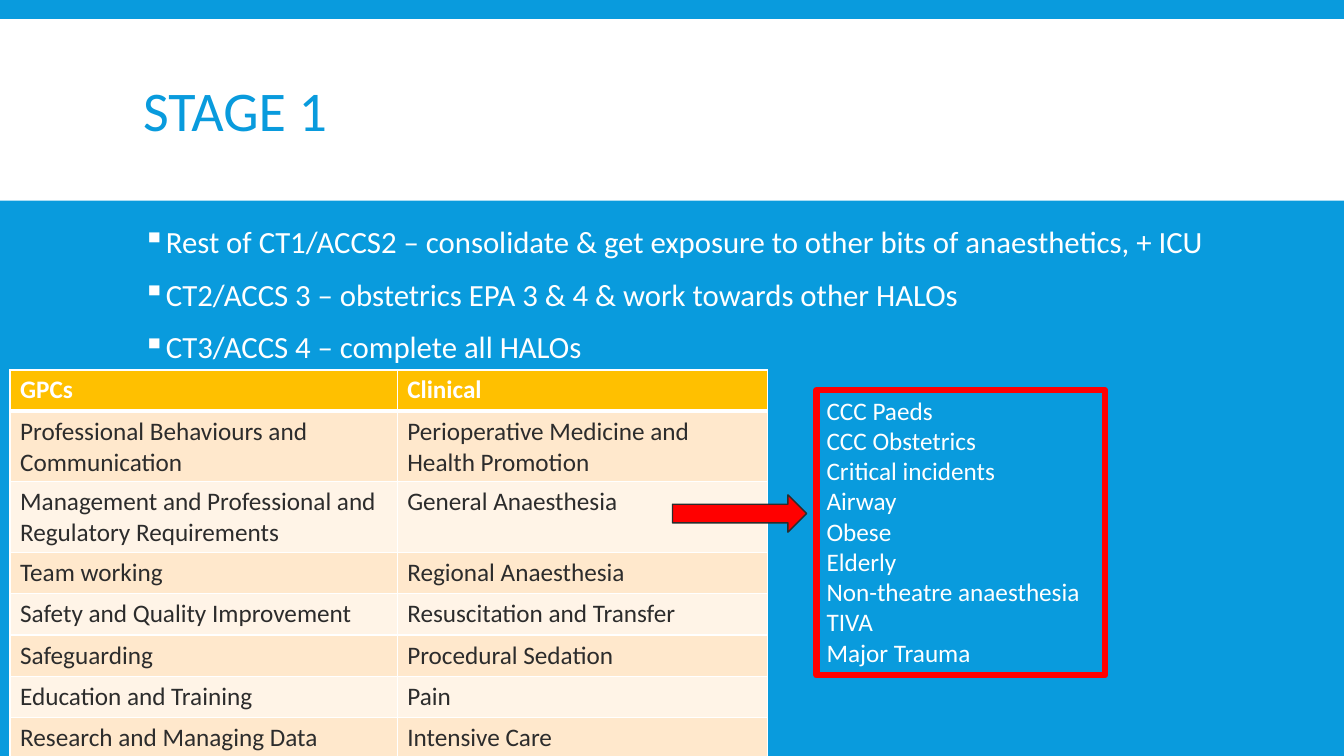
"""Builds the Stage 1 training slide with its curriculum table and callout."""
from lxml import etree
from pptx import Presentation
from pptx.dml.color import RGBColor
from pptx.enum.shapes import MSO_SHAPE
from pptx.enum.text import MSO_ANCHOR, MSO_AUTO_SIZE, PP_ALIGN
from pptx.oxml.ns import qn
from pptx.util import Inches, Pt

RECTANGLE, RIGHT_ARROW = MSO_SHAPE.RECTANGLE, MSO_SHAPE.RIGHT_ARROW
LEFT, TOP, MIDDLE = PP_ALIGN.LEFT, MSO_ANCHOR.TOP, MSO_ANCHOR.MIDDLE
FIT_SHAPE, NO_FIT = MSO_AUTO_SIZE.SHAPE_TO_FIT_TEXT, MSO_AUTO_SIZE.NONE

THEME = {
    "font": "Calibri",
    "blue": "099BDD", "white": "FFFFFF", "ink": "2C2C2C", "red": "FF0000",
    "header": "FFC000", "bands": ("FFE8CC", "FFF4E7"),
    "title": Pt(40), "bullet": Pt(22), "body": Pt(18),
}

BULLETS = (
    "Rest of CT1/ACCS2 – consolidate & get exposure to other bits of anaesthetics, + ICU",
    "CT2/ACCS 3 – obstetrics EPA 3 & 4 & work towards other HALOs",
    "CT3/ACCS 4 – complete all HALOs",
)
DOMAINS = (
    ("GPCs", "Clinical"),
    ("Professional Behaviours and Communication",
     "Perioperative Medicine and Health Promotion"),
    ("Management and Professional and Regulatory Requirements", "General Anaesthesia"),
    ("Team working", "Regional Anaesthesia"),
    ("Safety and Quality Improvement", "Resuscitation and Transfer"),
    ("Safeguarding", "Procedural Sedation"),
    ("Education and Training", "Pain"),
    ("Research and Managing Data", "Intensive Care"),
)
ANAESTHESIA_TOPICS = (
    "CCC Paeds", "CCC Obstetrics", "Critical incidents", "Airway", "Obese",
    "Elderly", "Non-theatre anaesthesia", "TIVA", "Major Trauma",
)


def apply_format(target, **values):
    """Set each given value as an attribute of the target."""
    for attribute, value in values.items():
        setattr(target, attribute, value)


def write_paragraph(paragraph, text, size, color, bold=False):
    """Put left-aligned text in a paragraph as one formatted run."""
    paragraph.alignment = LEFT
    run = paragraph.add_run()
    run.text = text
    apply_format(run.font, name=THEME["font"], size=THEME[size], bold=bold)
    run.font.color.rgb = RGBColor.from_string(THEME[color])


deck = Presentation()
apply_format(deck, slide_width=Inches(13.33), slide_height=Inches(7.5))
slide = deck.slides.add_slide(deck.slide_layouts[5])
slide.background.fill.solid()
slide.background.fill.fore_color.rgb = RGBColor.from_string(THEME["blue"])

title_band = slide.shapes.add_shape(
    RECTANGLE, Inches(0), Inches(0.19), Inches(13.33), Inches(1.8))
title_band.shadow.inherit = False
title_band.fill.solid()
title_band.fill.fore_color.rgb = RGBColor.from_string(THEME["white"])
title_band.line.fill.background()
slide.shapes._spTree.insert(2, title_band._element)

title = slide.shapes.title
apply_format(title, left=Inches(1.32), top=Inches(0.31),
             width=Inches(10.7), height=Inches(1.65))
apply_format(title.text_frame, vertical_anchor=MIDDLE, word_wrap=True, auto_size=NO_FIT)
heading = title.text_frame.paragraphs[0]
write_paragraph(heading, "STAGE 1", "title", "blue")
heading.line_spacing = 0.85

stages = slide.shapes.add_textbox(
    Inches(1.32), Inches(2.2), Inches(11.43), Inches(4.6)).text_frame
stages.word_wrap = True
for index, text in enumerate(BULLETS):
    stage = stages.add_paragraph() if index else stages.paragraphs[0]
    apply_format(stage, line_spacing=0.9, space_before=Pt(12 if index else 0),
                 space_after=Pt(2))
    properties = stage._p.get_or_add_pPr()
    properties.set("marL", str(Inches(0.2)))
    properties.set("indent", str(-Inches(0.2)))
    bullet_color = etree.SubElement(properties, qn("a:buClr"))
    etree.SubElement(bullet_color, qn("a:srgbClr"), val=THEME["white"])
    etree.SubElement(properties, qn("a:buChar"), char="▪")
    write_paragraph(stage, text, "bullet", "white")

domains = slide.shapes.add_table(
    len(DOMAINS), 2, Inches(0.1), Inches(3.67), Inches(7.51), Inches(3.28)).table
for column, width in zip(domains.columns, (3.84, 3.67)):
    column.width = Inches(width)
for row_index, labels in enumerate(DOMAINS):
    is_header = row_index == 0
    domains.rows[row_index].height = Inches(0.41)
    fill_color = THEME["header"] if is_header else THEME["bands"][(row_index - 1) % 2]
    for column_index, label in enumerate(labels):
        cell = domains.cell(row_index, column_index)
        cell_properties = cell._tc.get_or_add_tcPr()
        for side in ("L", "R", "T", "B"):
            under_header = (row_index, side) in ((0, "B"), (1, "T"))
            border = etree.SubElement(cell_properties, qn(f"a:ln{side}"),
                                      w=str(Pt(3 if under_header else 1)))
            border_fill = etree.SubElement(border, qn("a:solidFill"))
            etree.SubElement(border_fill, qn("a:srgbClr"), val=THEME["white"])
        cell.fill.solid()
        cell.fill.fore_color.rgb = RGBColor.from_string(fill_color)
        write_paragraph(cell.text_frame.paragraphs[0], label, "body",
                        "white" if is_header else "ink", is_header)

topics = slide.shapes.add_shape(
    RECTANGLE, Inches(8.1), Inches(3.87), Inches(2.86), Inches(2.83))
topics.shadow.inherit = False
topics.fill.background()
topics.line.color.rgb = RGBColor.from_string(THEME["red"])
topics.line.width = Pt(4.5)
apply_format(topics.text_frame, word_wrap=True, vertical_anchor=TOP, auto_size=FIT_SHAPE)
for index, topic in enumerate(ANAESTHESIA_TOPICS):
    frame = topics.text_frame
    entry = frame.add_paragraph() if index else frame.paragraphs[0]
    write_paragraph(entry, topic, "body", "white")

topic_arrow = slide.shapes.add_shape(
    RIGHT_ARROW, Inches(6.67), Inches(4.91), Inches(1.33), Inches(0.37))
topic_arrow.shadow.inherit = False
topic_arrow.fill.solid()
topic_arrow.fill.fore_color.rgb = RGBColor.from_string(THEME["red"])
topic_arrow.line.color.rgb = RGBColor.from_string(THEME["ink"])
topic_arrow.line.width = Pt(1)

deck.save("out.pptx")
